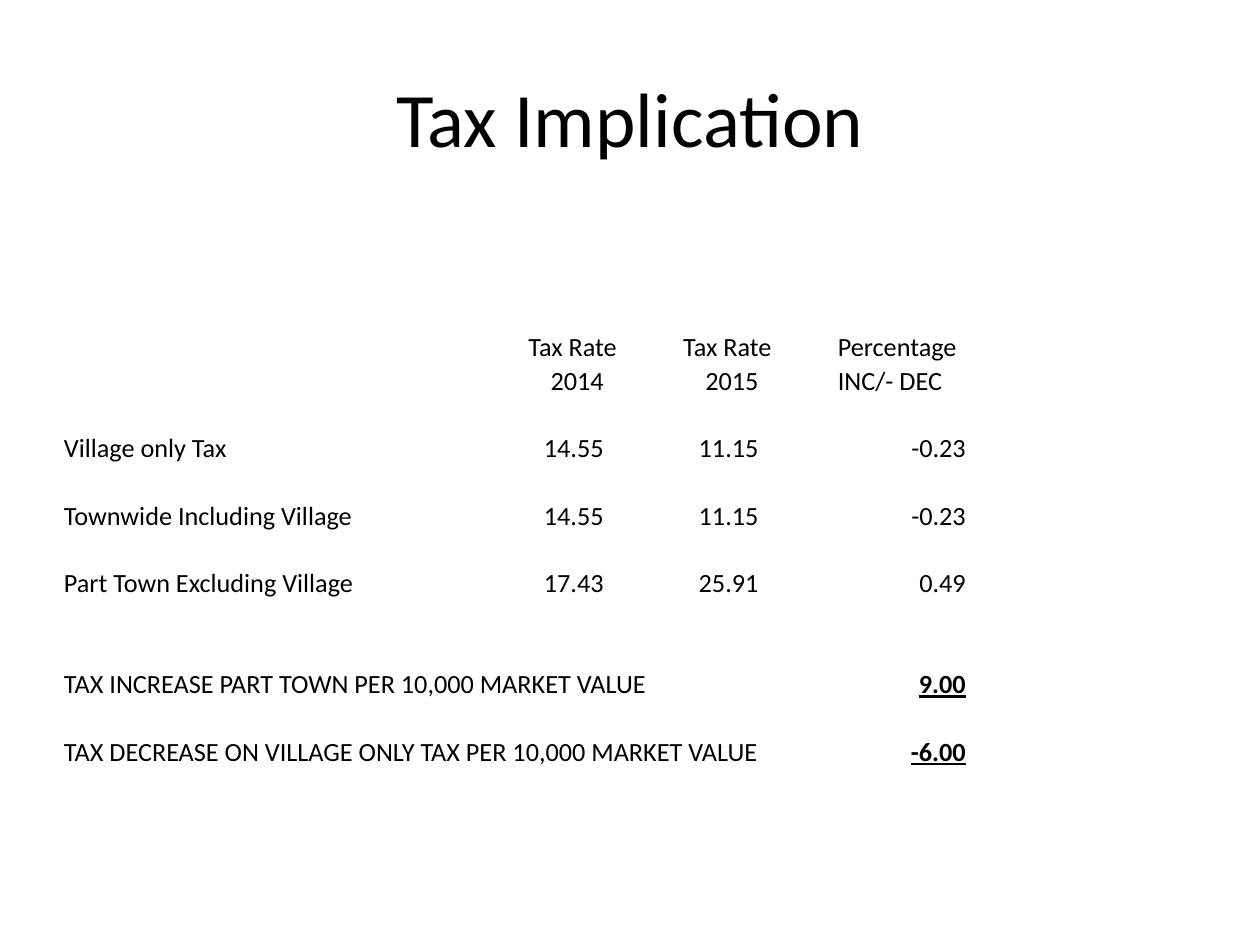
from dataclasses import dataclass
from typing import Any

from lxml import etree
from pptx import Presentation
from pptx.dml.color import RGBColor
from pptx.enum import text
from pptx.oxml import ns
from pptx.util import Cm, Pt

COLORS = {"text": "000000", "background": "FFFFFF"}
LEFT, RIGHT, CENTER = text.PP_ALIGN.LEFT, text.PP_ALIGN.RIGHT, text.PP_ALIGN.CENTER
ROW_COUNT, COLUMN_COUNT = 14, 14
RATE_2014, RATE_2015, CHANGE = 6, 8, 10

HEADINGS = [
    (RATE_2014, "Tax Rate", "2014", 2, RIGHT),
    (RATE_2015, "Tax Rate", "2015", 2, RIGHT),
    (CHANGE, "Percentage", "INC/- DEC", 1, LEFT),
]
TAX_RATES = [
    (4, "Village only Tax", 3, ("14.55", "11.15", "-0.23")),
    (6, "Townwide Including Village", 4, ("14.55", "11.15", "-0.23")),
    (8, "Part Town Excluding Village", 4, ("17.43", "25.91", "0.49")),
]
IMPACTS = [
    (11, "TAX INCREASE PART TOWN PER 10,000 MARKET VALUE", 8, "9.00"),
    (13, "TAX DECREASE ON VILLAGE ONLY TAX PER 10,000 MARKET VALUE", 10, "-6.00"),
]


@dataclass
class SlideBuilder:
    slide: Any
    font_name: str = "Calibri"
    title_size: int = 44
    table_size: int = 15

    def background(self):
        fill = self.slide.background.fill
        fill.solid()
        fill.fore_color.rgb = RGBColor.from_string(COLORS["background"])

    def style(self, paragraph, size, alignment, strong=False):
        paragraph.alignment = alignment
        for font in [paragraph.font] + [run.font for run in paragraph.runs]:
            font.name = self.font_name
            font.size = Pt(size)
            font.bold = strong
            font.underline = strong
            font.color.rgb = RGBColor.from_string(COLORS["text"])

    def title(self, words, left, top, width, height):
        frame = self.slide.shapes.add_textbox(left, top, width, height).text_frame
        frame.word_wrap = True
        frame.vertical_anchor = text.MSO_ANCHOR.MIDDLE
        frame.text = words
        self.style(frame.paragraphs[0], self.title_size, CENTER)

    def table(self, left, top, column_widths, row_height):
        table = self.slide.shapes.add_table(
            ROW_COUNT, len(column_widths), left, top,
            sum(column_widths), row_height * ROW_COUNT).table
        table.first_row = table.horz_banding = False
        for column, width in zip(table.columns, column_widths):
            column.width = width
        for row in table.rows:
            row.height = row_height
        for cell in table.iter_cells():
            cell.fill.background()
            cell.vertical_anchor = text.MSO_ANCHOR.BOTTOM
            cell.margin_left = cell.margin_right = cell.margin_top = Cm(0.02)
            cell.margin_bottom = 0
            etree.SubElement(cell.text_frame.paragraphs[0]._p,
                             ns.qn("a:endParaRPr"), sz=str(self.table_size * 100))
        return table

    def cell(self, table, row, column, words, span=1, alignment=LEFT, strong=False):
        cell = table.cell(row, column)
        if span > 1:
            cell.merge(table.cell(row, column + span - 1))
        cell.text = words
        self.style(cell.text_frame.paragraphs[0], self.table_size, alignment, strong)


def main():
    presentation = Presentation()
    presentation.slide_width, presentation.slide_height = Cm(25.4), Cm(19.05)
    builder = SlideBuilder(presentation.slides.add_slide(presentation.slide_layouts[6]))
    builder.background()
    builder.title("Tax Implication", Cm(1.27), Cm(0.76), Cm(22.86), Cm(3.18))

    widths = [Cm(2.62) if column == CHANGE else Cm(1.56) for column in range(COLUMN_COUNT)]
    table = builder.table(Cm(1.27), Cm(5.97), widths, Cm(0.68))
    for column, heading, detail, span, alignment in HEADINGS:
        builder.cell(table, 1, column, heading, span)
        builder.cell(table, 2, column, detail, alignment=alignment)
    for row, label, span, values in TAX_RATES:
        builder.cell(table, row, 0, label, span)
        for column, value in zip((RATE_2014, RATE_2015, CHANGE), values):
            builder.cell(table, row, column, value, alignment=RIGHT)
    for row, label, span, value in IMPACTS:
        builder.cell(table, row, 0, label, span)
        builder.cell(table, row, CHANGE, value, alignment=RIGHT, strong=True)
    presentation.save("out.pptx")


if __name__ == "__main__":
    main()
